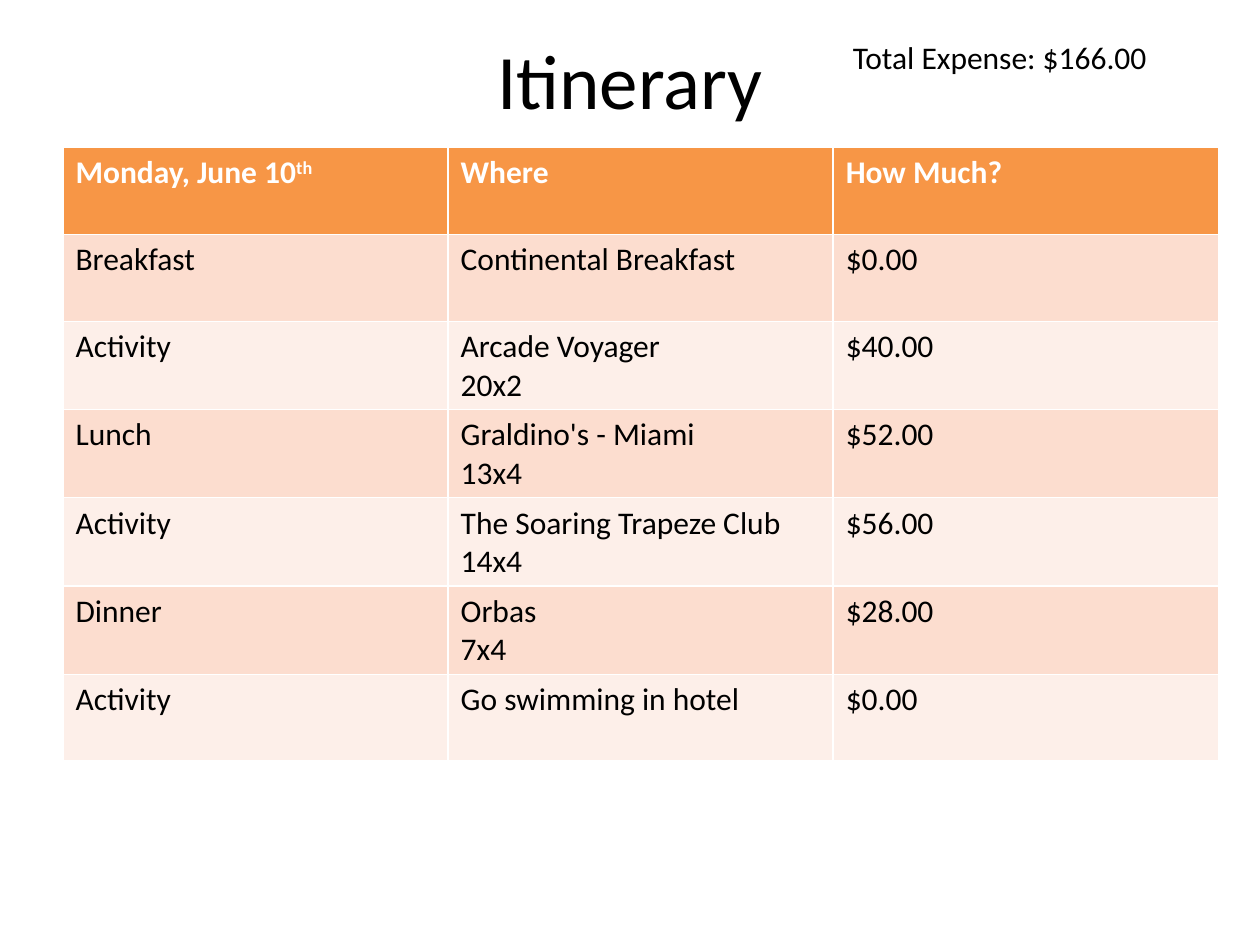
from dataclasses import dataclass

from pptx import Presentation
from pptx.dml.color import RGBColor
from pptx.enum.text import MSO_ANCHOR, MSO_AUTO_SIZE, PP_ALIGN
from pptx.util import Inches, Pt

COLORS = {
    "text": "000000",
    "header_text": "FFFFFF",
    "header": "F79646",
    "odd_row": "FCDDCF",
    "even_row": "FDEFE9",
}


@dataclass(frozen=True)
class Stop:
    label: str
    where: str
    cost: str


STOPS = [
    Stop("Breakfast", "Continental Breakfast", "$0.00"),
    Stop("Activity", "Arcade Voyager\n20x2", "$40.00"),
    Stop("Lunch", "Graldino's - Miami\n13x4", "$52.00"),
    Stop("Activity", "The Soaring Trapeze Club\n14x4", "$56.00"),
    Stop("Dinner", "Orbas\n7x4", "$28.00"),
    Stop("Activity", "Go swimming in hotel", "$0.00"),
]


def style_run(run, color: str, size: float = 18, bold: bool = False) -> None:
    for name, value in {"name": "Calibri", "size": Pt(size), "bold": bold}.items():
        setattr(run.font, name, value)
    run.font.color.rgb = RGBColor.from_string(COLORS[color])


def write(frame, text: str, color: str, size: float = 18, bold: bool = False) -> None:
    frame.text = text
    for paragraph in frame.paragraphs:
        for run in paragraph.runs:
            style_run(run, color, size, bold)


def fill_cell(cell, text: str, fill: str, color: str, bold: bool = False) -> None:
    cell.fill.solid()
    cell.fill.fore_color.rgb = RGBColor.from_string(COLORS[fill])
    write(cell.text_frame, text, color, bold=bold)


def add_title(slide) -> None:
    title = slide.shapes.title
    box = {"left": 0.5, "top": 0, "width": 9, "height": 1.25}
    for name, length in box.items():
        setattr(title, name, Inches(length))
    write(title.text_frame, "Itinerary", "text", 44)
    title.text_frame.vertical_anchor = MSO_ANCHOR.MIDDLE
    title.text_frame.paragraphs[0].alignment = PP_ALIGN.CENTER


def add_total(slide) -> None:
    total = slide.shapes.add_textbox(
        Inches(6.67), Inches(0.25), Inches(3.08), Inches(0.4)
    ).text_frame
    total.word_wrap = True
    total.auto_size = MSO_AUTO_SIZE.SHAPE_TO_FIT_TEXT
    write(total, "Total Expense: $166.00", "text")


def add_schedule(slide, stops: list[Stop]) -> None:
    rows = len(stops) + 1
    schedule = slide.shapes.add_table(
        rows, 3, Inches(0.5), Inches(1.17), Inches(9.17), Inches(0.69 * rows)
    ).table
    for column, heading in enumerate(["Monday, June 10", "Where", "How Much?"]):
        fill_cell(schedule.cell(0, column), heading, "header", "header_text", True)
    ordinal = schedule.cell(0, 0).text_frame.paragraphs[0].add_run()
    ordinal.text = "th"
    style_run(ordinal, "header_text", bold=True)
    ordinal.font._element.set("baseline", "30000")

    for row, stop in enumerate(stops, start=1):
        fill = "odd_row" if row % 2 else "even_row"
        for column, text in enumerate([stop.label, stop.where, stop.cost]):
            fill_cell(schedule.cell(row, column), text, fill, "text")


def main() -> None:
    deck = Presentation()
    deck.slide_width, deck.slide_height = Inches(10), Inches(7.5)
    slide = deck.slides.add_slide(deck.slide_layouts[5])
    add_title(slide)
    add_total(slide)
    add_schedule(slide, STOPS)
    deck.save("out.pptx")


if __name__ == "__main__":
    main()
